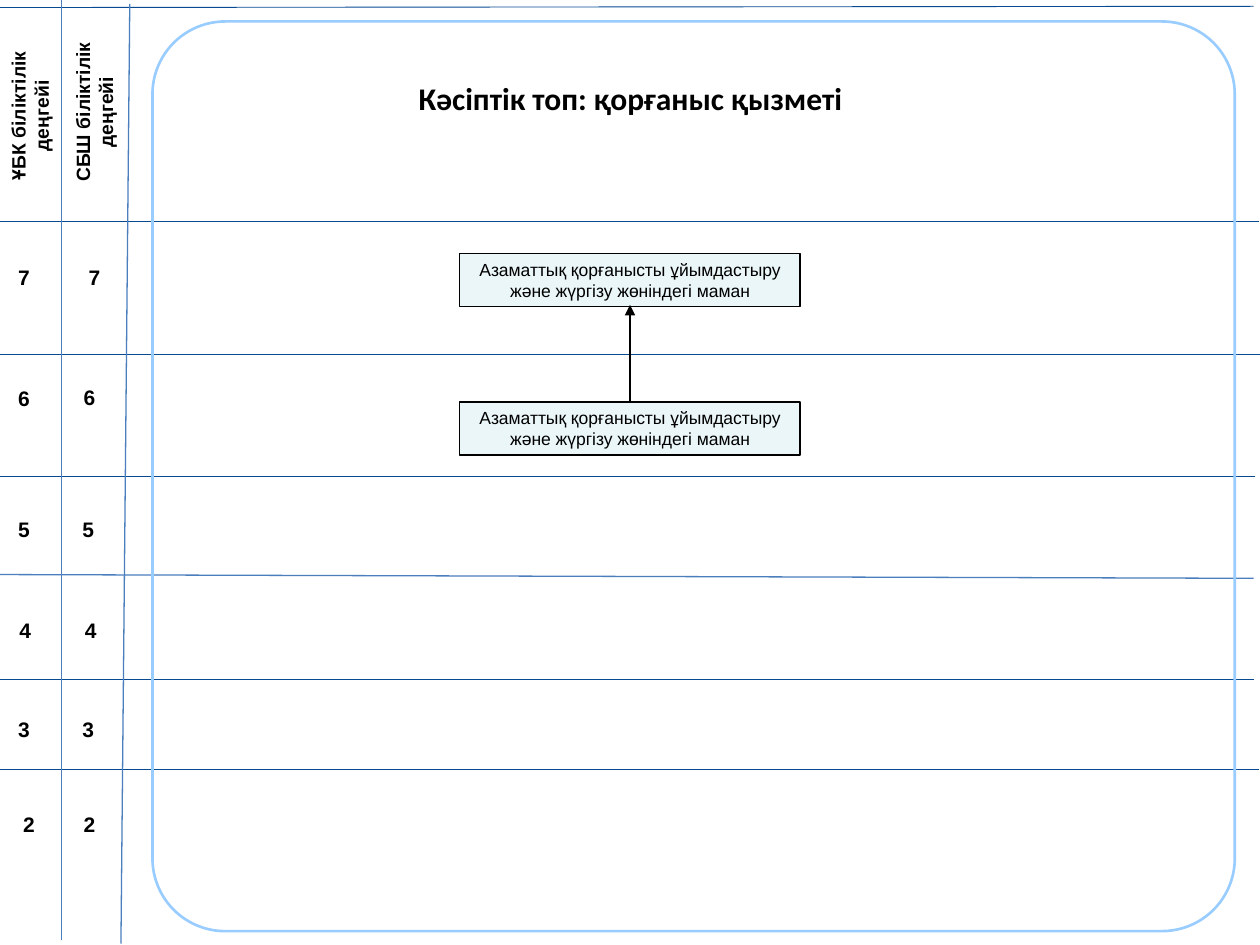
from dataclasses import dataclass
from lxml.etree import SubElement
from pptx import Presentation
from pptx.dml.color import RGBColor
from pptx.enum.shapes import MSO_CONNECTOR, MSO_SHAPE
from pptx.enum.text import MSO_ANCHOR, MSO_AUTO_SIZE, PP_ALIGN
from pptx.oxml.ns import qn
from pptx.util import Emu, Pt

SCALE = 9144


@dataclass(frozen=True)
class Theme:
    ink: str = "000000"
    grid: str = "084A92"
    edge: str = "4B7EBC"
    frame: str = "99CCFF"
    card: str = "EBF6F9"
    font: str = "Arial"
    head: str = "Calibri"
    title: int = 18
    level: int = 12
    label: int = 11
    body: int = 10


THEME = Theme()

ROWS = [
    (-3, 6, 995, 5, THEME.grid, 0.5),
    (-1, 176, 999, 176, THEME.grid, 0.5),
    (0, 281, 1000, 281, THEME.grid, 0.5),
    (-4, 378, 996, 378, THEME.grid, 0.5),
    (-2, 456, 995, 459, THEME.edge, 0.75),
    (-5, 539, 995, 539, THEME.grid, 0.5),
    (-1, 611, 999, 611, THEME.grid, 0.5),
]
COLUMNS = [
    (49, 0, 49, 746, THEME.edge, 0.75),
    (103, 3, 96, 749, THEME.edge, 0.75),
]
LEVELS = [
    ("7", (0, 206), (56, 206)),
    ("6", (0, 302), (52, 301)),
    ("5", (0, 406), (51, 406)),
    ("4", (1, 486), (53, 486)),
    ("3", (0, 565), (51, 565)),
    ("2", (4, 640), (52, 640)),
]
HEADS = [
    ("ҰБК біліктілік деңгейі", (1, 9, 45, 166)),
    ("СБШ біліктілік деңгейі", (52, 15, 45, 148)),
]
JOB = "Азаматтық қорғанысты ұйымдастыру және жүргізу жөніндегі маман"
CARDS = (201, 319)


def px(*nums):
    return [Emu(n * SCALE) for n in nums]


def rgb(code):
    return RGBColor.from_string(code)


def write(frame, text, size, font=THEME.font, bold=True):
    frame.word_wrap = True
    frame.auto_size = MSO_AUTO_SIZE.NONE
    para = frame.paragraphs[0]
    para.text = text
    para.alignment = PP_ALIGN.CENTER
    para.font.name = font
    para.font.size = Pt(size)
    para.font.bold = bold
    para.font.color.rgb = rgb(THEME.ink)


def add_box(slide, area, fill=None, line=None, width=0.75, curve=0):
    box = slide.shapes.add_shape(MSO_SHAPE.ROUNDED_RECTANGLE, *px(*area))
    box.adjustments[0] = curve
    box.shadow.inherit = False
    if fill:
        box.fill.solid()
        box.fill.fore_color.rgb = rgb(fill)
    else:
        box.fill.background()
    if line:
        box.line.color.rgb = rgb(line)
        box.line.width = Pt(width)
    else:
        box.line.fill.background()
    return box


def add_label(slide, area, text, size, bold=True, turn=False, **style):
    frame = add_box(slide, area, **style).text_frame
    frame.margin_left, frame.margin_top, frame.margin_right, frame.margin_bottom = px(4, 4, 4, 4)
    frame.vertical_anchor = MSO_ANCHOR.MIDDLE
    write(frame, text, size, bold=bold)
    if turn:
        frame._txBody.bodyPr.set("vert", "vert270")


def add_line(slide, x1, y1, x2, y2, color, width, arrow=False):
    line = slide.shapes.add_connector(MSO_CONNECTOR.STRAIGHT, *px(x1, y1, x2, y2))
    line.line.color.rgb = rgb(color)
    line.line.width = Pt(width)
    if arrow:
        SubElement(line.line._get_or_add_ln(), qn("a:tailEnd"), type="triangle")
    SubElement(line._element.spPr, qn("a:effectLst"))


def set_title(slide, area, text):
    title = slide.shapes.title
    title.left, title.top, title.width, title.height = px(*area)
    title.text_frame.vertical_anchor = MSO_ANCHOR.TOP
    write(title.text_frame, text, THEME.title, THEME.head)


def main():
    deck = Presentation()
    deck.slide_width, deck.slide_height = px(1000, 750)
    slide = deck.slides.add_slide(deck.slide_layouts[5])
    set_title(slide, (249, 58, 503, 40), "Кәсіптік топ: қорғаныс қызметі")
    for row in ROWS:
        add_line(slide, *row)
    add_box(slide, (121, 17, 859, 722), line=THEME.frame, width=1.5, curve=0.08)
    for col in COLUMNS:
        add_line(slide, *col)
    for text, area in HEADS:
        add_label(slide, area, text, THEME.label, turn=True)
    for text, *spots in LEVELS:
        for spot in spots:
            add_label(slide, (*spot, 38, 28), text, THEME.level)
    for top in CARDS:
        add_label(slide, (365, top, 270, 42), JOB, THEME.body, bold=False,
                  fill=THEME.card, line=THEME.ink)
    add_line(slide, 500, 319, 500, 242, THEME.ink, 1, arrow=True)
    deck.save("out.pptx")


if __name__ == "__main__":
    main()
